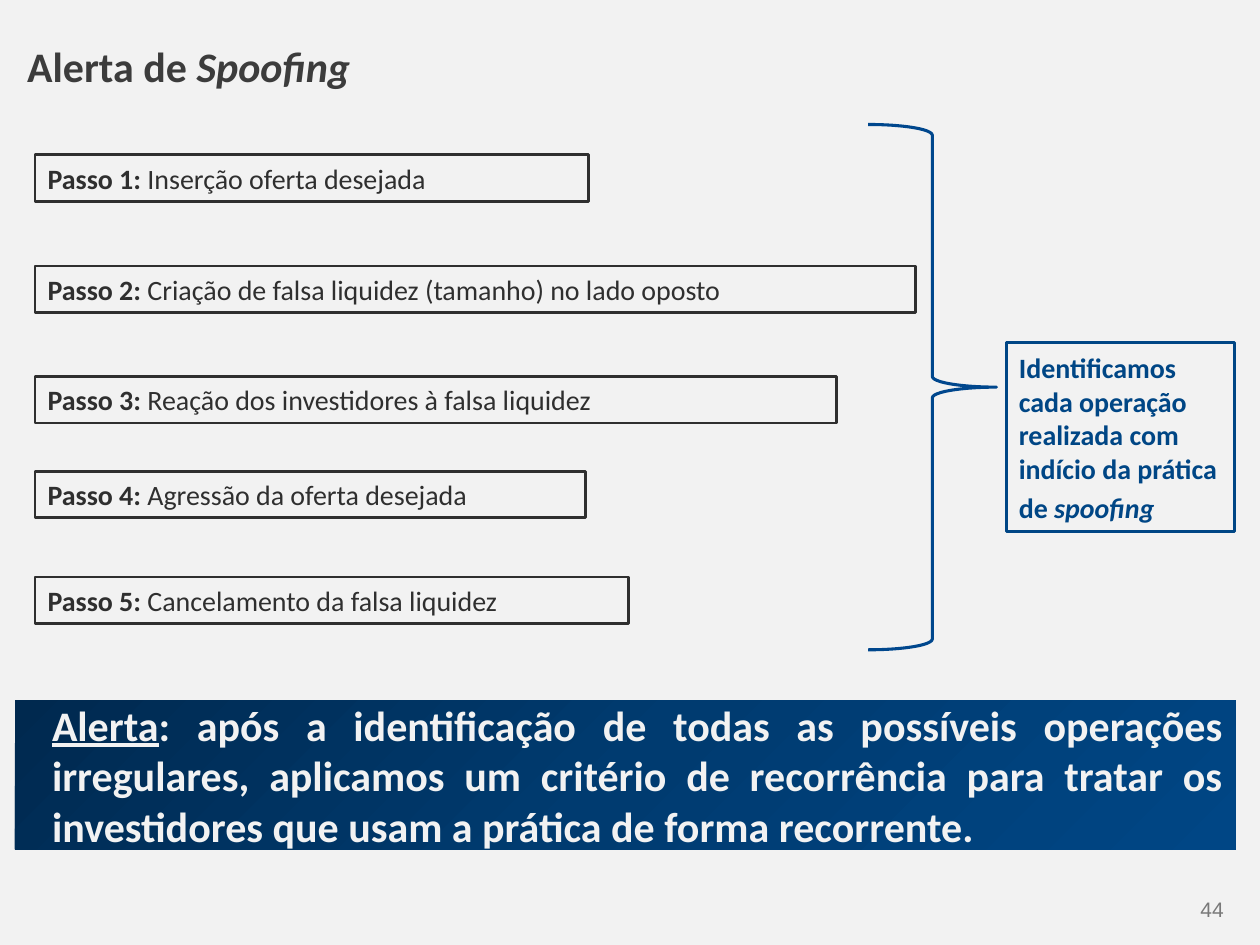
import copy

import pptx
import pptx.dml.color
import pptx.enum.shapes
import pptx.enum.text
import pptx.oxml.ns
import pptx.util
from pptx.util import Cm

SHAPES = pptx.enum.shapes.MSO_SHAPE
ALIGN = pptx.enum.text.PP_ALIGN
ANCHOR = pptx.enum.text.MSO_ANCHOR
AUTO_SIZE = pptx.enum.text.MSO_AUTO_SIZE

COLORS = {
    "background": "F2F2F2",
    "title": "3C3C3C",
    "step": "2F2F2F",
    "brace": "00478D",
    "conclusion": "004685",
    "alert_text": "F2F2F2",
    "page": "797979",
}
ALERT_GRADIENT = [(0, "00294F"), (0.5, "003B70"), (1, "004685")]

# Top and width in centimetres, then the wording of each step
STEPS = [
    (3.12, 11.15, "Inserção oferta desejada"),
    (5.36, 17.75, "Criação de falsa liquidez (tamanho) no lado oposto"),
    (7.59, 16.15, "Reação dos investidores à falsa liquidez"),
    (9.5, 11.1, "Agressão da oferta desejada"),
    (11.63, 11.96, "Cancelamento da falsa liquidez"),
]


def rgb(hex_color):
    return pptx.dml.color.RGBColor.from_string(hex_color)


def write(shape, paragraphs, *, color, size, font="Calibri", align=ALIGN.LEFT,
          space_before=0, indent=0, grow=False, wrap=True):
    """Fill a shape with paragraphs, each a list of (text, styles); styles holds b, i or u."""
    frame = shape.text_frame
    frame.word_wrap = wrap
    frame.vertical_anchor = ANCHOR.MIDDLE
    frame.auto_size = AUTO_SIZE.SHAPE_TO_FIT_TEXT if grow else AUTO_SIZE.NONE
    for index, runs in enumerate(paragraphs):
        paragraph = frame.add_paragraph() if index else frame.paragraphs[0]
        paragraph.alignment = align
        if index:
            paragraph.space_before = pptx.util.Pt(space_before)
        if indent:
            properties = paragraph._p.get_or_add_pPr()
            properties.set("marL", str(Cm(indent)))
            properties.set("indent", "0")
        for text, styles in runs:
            run = paragraph.add_run()
            run.text = text
            run.font.name = font
            run.font.size = pptx.util.Pt(size)
            run.font.color.rgb = rgb(color)
            run.font.bold = "b" in styles
            run.font.italic = "i" in styles
            run.font.underline = "u" in styles


def add_textbox(slide, left, top, width, height):
    return slide.shapes.add_textbox(Cm(left), Cm(top), Cm(width), Cm(height))


def add_outline(slide, kind, left, top, width, height, color, weight):
    """Add an unfilled shape with a coloured line."""
    shape = slide.shapes.add_shape(kind, Cm(left), Cm(top), Cm(width), Cm(height))
    shape.shadow.inherit = False
    shape.fill.background()
    shape.line.color.rgb = rgb(color)
    shape.line.width = pptx.util.Pt(weight)
    return shape


def add_gradient_band(slide, left, top, width, height, stops):
    band = slide.shapes.add_shape(SHAPES.RECTANGLE, Cm(left), Cm(top), Cm(width), Cm(height))
    band.shadow.inherit = False
    band.line.fill.background()
    band.fill.gradient()
    band.fill.gradient_angle = 315
    stop_list = band._element.spPr.find(".//" + pptx.oxml.ns.qn("a:gsLst"))
    stop_list.insert(1, copy.deepcopy(stop_list[0]))
    for stop, (position, color) in zip(band.fill.gradient_stops, stops):
        stop.position = position
        stop.color.rgb = rgb(color)
    return band


def add_page_number(slide, number):
    page = add_textbox(slide, 23.98, 18.08, 0.69, 0.51)
    frame = page.text_frame
    frame.margin_left = frame.margin_right = frame.margin_top = frame.margin_bottom = 0
    write(page, [[(number, "")]], color=COLORS["page"], size=12, font="Arial",
          align=ALIGN.RIGHT, grow=True, wrap=False)


def main():
    presentation = pptx.Presentation()
    presentation.slide_width, presentation.slide_height = Cm(25.4), Cm(19.05)
    slide = presentation.slides.add_slide(presentation.slide_layouts[6])
    slide.background.fill.solid()
    slide.background.fill.fore_color.rgb = rgb(COLORS["background"])

    add_page_number(slide, "44")
    title = add_textbox(slide, 0.3, 0.53, 19.2, 1.6)
    write(title, [[("Alerta de ", "b"), ("Spoofing", "bi")]], color=COLORS["title"], size=24)

    for number, (top, width, description) in enumerate(STEPS, 1):
        step = add_outline(slide, SHAPES.RECTANGLE, 0.71, top, width, 0.94, COLORS["step"], 1.5)
        write(step, [[(f"Passo {number}: ", "b"), (description, "")]],
              color=COLORS["step"], size=16, grow=True)

    alert = add_gradient_band(slide, 0.3, 14.12, 24.61, 3, ALERT_GRADIENT)
    write(alert, [[
        ("Alerta", "bu"),
        (": após a identificação de todas as possíveis operações irregulares, "
         "aplicamos um critério de recorrência para tratar os investidores "
         "que usam a prática de forma recorrente.", "b"),
    ]], color=COLORS["alert_text"], size=24, align=ALIGN.JUSTIFY, indent=0.5)

    add_outline(slide, SHAPES.RIGHT_BRACE, 17.5, 2.51, 2.59, 10.59, COLORS["brace"], 1.75)
    conclusion = add_outline(slide, SHAPES.RECTANGLE, 20.29, 6.91, 4.6, 3.81,
                             COLORS["conclusion"], 2)
    write(conclusion, [
        [("Identificamos cada operação realizada com indício da prática", "b")],
        [("de ", "b"), ("spoofing", "bi")],
    ], color=COLORS["conclusion"], size=16, space_before=3.2, grow=True)

    presentation.save("out.pptx")


if __name__ == "__main__":
    main()
